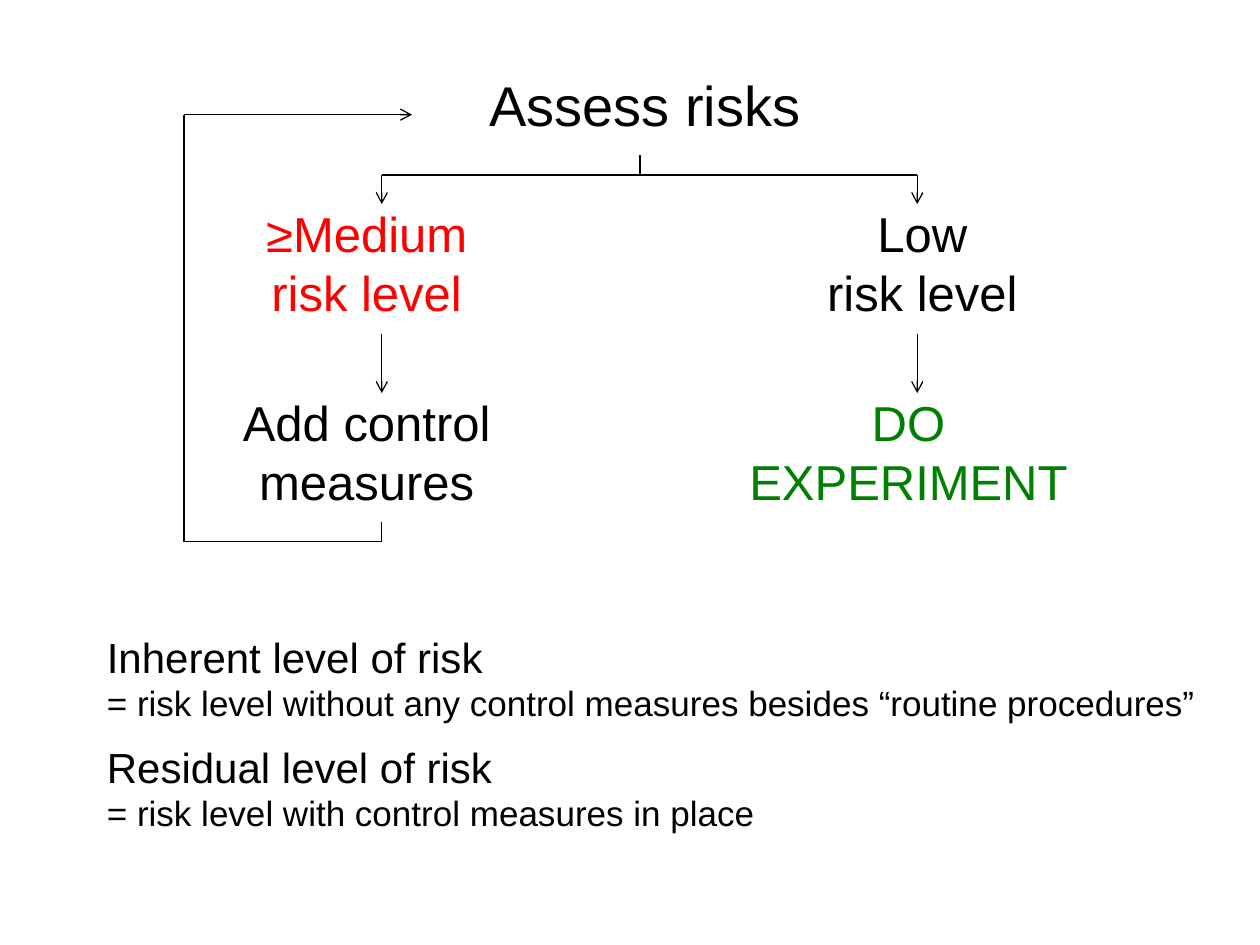
from lxml import etree
from pptx import Presentation
from pptx.dml.color import RGBColor
from pptx.enum import shapes, text
from pptx.oxml.ns import qn
from pptx.util import Inches, Pt

COLORS = {"ink": "000000", "danger": "FF0000", "safe": "008000"}
FONT = "Arial"
LEFT_X, RIGHT_X, LOOP_X = 3.03, 7.28, 1.46


def style(p, size, color="ink", align=text.PP_ALIGN.CENTER):
    p.alignment = align
    p.font.name = FONT
    p.font.size = Pt(size)
    p.font.color.rgb = RGBColor.from_string(COLORS[color])


def add_title(s, box, words):
    title = s.shapes.title
    title.left, title.top, title.width, title.height = map(Inches, box)
    title.text_frame.text = words
    title.text_frame.vertical_anchor = text.MSO_ANCHOR.MIDDLE
    style(title.text_frame.paragraphs[0], 32)


def add_text(s, box, lines):
    tf = s.shapes.add_textbox(*map(Inches, box)).text_frame
    tf.word_wrap = True
    tf.text = "\n".join(lines)
    return tf


def add_step(s, box, lines, color="ink"):
    tf = add_text(s, box, lines)
    tf.vertical_anchor = text.MSO_ANCHOR.MIDDLE
    for p in tf.paragraphs:
        style(p, 28, color)


def add_line(s, x1, y1, x2, y2, arrow=False):
    line = s.shapes.add_connector(shapes.MSO_CONNECTOR.STRAIGHT,
                                  *map(Inches, (x1, y1, x2, y2)))
    line.line.width = Pt(0.75)
    line.line.color.rgb = RGBColor.from_string(COLORS["ink"])
    if arrow:
        etree.SubElement(line.line._get_or_add_ln(), qn("a:tailEnd"), type="arrow")
    etree.SubElement(line._element.spPr, qn("a:effectLst"))


def add_branches(s, x, top, bar_y):
    """Fork below the title, with an arrow into and out of each risk level."""
    add_line(s, x, top, x, bar_y)
    add_line(s, LEFT_X, bar_y, RIGHT_X, bar_y)
    for branch_x in (LEFT_X, RIGHT_X):
        add_line(s, branch_x, bar_y, branch_x, 1.62, arrow=True)
        add_line(s, branch_x, 2.65, branch_x, 3.12, arrow=True)


def add_loop(s, start_y, bottom, top, end_x):
    """Feedback line from the control measures back to the title."""
    add_line(s, LEFT_X, start_y, LEFT_X, bottom)
    add_line(s, LOOP_X, bottom, LEFT_X, bottom)
    add_line(s, LOOP_X, top, LOOP_X, bottom)
    add_line(s, LOOP_X, top, end_x, top, arrow=True)


def add_definitions(s, box, definitions):
    tf = add_text(s, box, [line for pair in definitions for line in pair])
    tf.margin_top = Inches(0.08)
    for i, p in enumerate(tf.paragraphs):
        is_term = i % 2 == 0
        style(p, 24 if is_term else 20, align=text.PP_ALIGN.LEFT)
        if is_term and i:
            p.space_before = Pt(10)


def main():
    prs = Presentation()
    prs.slide_width, prs.slide_height = Inches(10), Inches(7.5)
    s = prs.slides.add_slide(prs.slide_layouts[5])

    add_title(s, (3.27, 0.52, 3.7, 0.61), "Assess risks")
    add_branches(s, 5.08, 1.23, 1.39)
    add_step(s, (1.06, 1.78, 3.7, 0.61), ["≥Medium", "risk level"], "danger")
    add_step(s, (5.47, 1.78, 3.7, 0.61), ["Low", "risk level"])
    add_step(s, (1.06, 3.28, 3.7, 0.61), ["Add control measures"])
    add_step(s, (5.79, 3.28, 2.84, 0.61), ["DO", "EXPERIMENT"], "safe")
    add_loop(s, 4.14, 4.3, 0.91, 3.27)
    add_definitions(s, (0.75, 4.93, 8.9, 1.89), [
        ("Inherent level of risk",
         "= risk level without any control measures besides “routine procedures”"),
        ("Residual level of risk",
         "= risk level with control measures in place"),
    ])
    prs.save("out.pptx")


if __name__ == "__main__":
    main()
